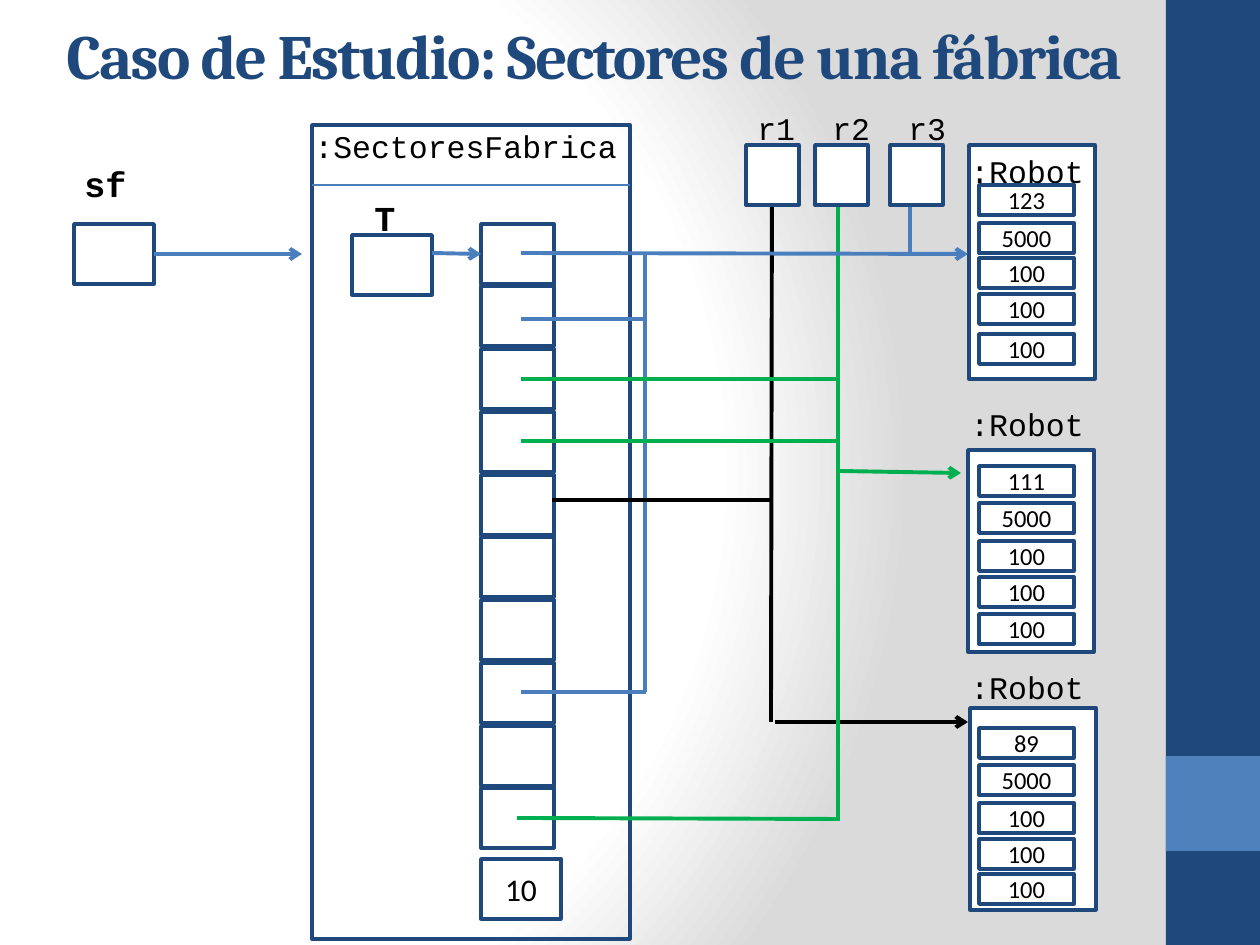
import pptx
import pptx.dml.color
import pptx.enum.shapes
import pptx.enum.text
import pptx.oxml
import pptx.oxml.ns
import pptx.util

EMU_PER_PX = 914400 / 126
COLORS = {
    "navy": "1F497D",
    "accent": "4F81BD",
    "blue": "4B7EBC",
    "green": "00B050",
    "black": "000000",
    "white": "FFFFFF",
    "gray": "DADADA",
}
SHAPES = pptx.enum.shapes.MSO_SHAPE
ANCHOR = pptx.enum.text.MSO_ANCHOR
ALIGN = pptx.enum.text.PP_ALIGN


def px(value):
    return pptx.util.Emu(round(value * EMU_PER_PX))


def color(name):
    return pptx.dml.color.RGBColor.from_string(COLORS[name])


class Diagram:
    mono = "Courier New"
    sans = "Calibri"
    serif = "Cambria"
    border = 2
    wire = 2.25

    def __init__(self, page):
        self.page = page

    def background(self):
        stops = "".join(
            f'<a:gs pos="{position}"><a:srgbClr val="{COLORS[name]}"/></a:gs>'
            for position, name in ((0, "white"), (75000, "white"), (100000, "gray"))
        )
        fill = pptx.oxml.parse_xml(
            f'<p:bg {pptx.oxml.ns.nsdecls("p", "a")}><p:bgPr><a:gradFill rotWithShape="1">'
            f'<a:gsLst>{stops}</a:gsLst><a:path path="circle">'
            '<a:fillToRect l="20000" t="50000" r="100000" b="50000"/></a:path>'
            '</a:gradFill><a:effectLst/></p:bgPr></p:bg>'
        )
        self.page.element.cSld.insert(0, fill)

    def add_span(self, frame, text, size, font, ink="black", bold=False):
        span = frame.paragraphs[0].add_run()
        span.text = text
        span.font.size = pptx.util.Pt(size)
        span.font.name = font
        span.font.bold = bold
        span.font.color.rgb = color(ink)
        return span

    def box(self, left, top, width, height, fill="white", line="navy", text=None, size=14):
        box = self.page.shapes.add_shape(
            SHAPES.RECTANGLE, px(left), px(top), px(width), px(height))
        box.shadow.inherit = False
        if fill:
            box.fill.solid()
            box.fill.fore_color.rgb = color(fill)
        else:
            box.fill.background()
        if line:
            box.line.color.rgb = color(line)
            box.line.width = pptx.util.Pt(self.border)
        else:
            box.line.fill.background()
        if text:
            frame = box.text_frame
            frame.vertical_anchor = ANCHOR.MIDDLE
            frame.paragraphs[0].alignment = ALIGN.CENTER
            self.add_span(frame, text, size, self.sans)
        return box

    def label(self, text, left, top, width, height=50, size=18, bold=False):
        box = self.page.shapes.add_textbox(px(left), px(top), px(width), px(height))
        box.text_frame.word_wrap = True
        self.add_span(box.text_frame, text, size, self.mono, bold=bold)

    def title(self, text, left, top, width, height):
        box = self.page.shapes.add_textbox(px(left), px(top), px(width), px(height))
        frame = box.text_frame
        frame.word_wrap = True
        frame.vertical_anchor = ANCHOR.MIDDLE
        span = self.add_span(frame, text, 36, self.serif, "navy", True)
        span.font._element.set("spc", "-100")

    def line(self, x1, y1, x2, y2, ink="blue", width=wire, arrow=False, begin=None, end=None):
        line = self.page.shapes.add_connector(
            pptx.enum.shapes.MSO_CONNECTOR.STRAIGHT, px(x1), px(y1), px(x2), px(y2))
        line.line.color.rgb = color(ink)
        line.line.width = pptx.util.Pt(width)
        if begin:
            line.begin_connect(*begin)
        if end:
            line.end_connect(*end)
        if arrow:
            stroke = line.line._get_or_add_ln()
            stroke.append(pptx.oxml.parse_xml(
                f'<a:tailEnd {pptx.oxml.ns.nsdecls("a")} type="arrow"/>'))
        line._element.spPr.append(pptx.oxml.parse_xml(
            f'<a:effectLst {pptx.oxml.ns.nsdecls("a")}/>'))

    def robot(self, left, top, height, label_top, serial, field_tops):
        self.box(left, top, 126, height)
        self.label(":Robot", 958, label_top, 149)
        for field_top, value in zip(field_tops, (serial, "5000", "100", "100", "100")):
            self.box(979, field_top, 95, 30, text=value)


def main():
    deck = pptx.Presentation()
    deck.slide_width = px(1260)
    deck.slide_height = px(945)
    diagram = Diagram(deck.slides.add_slide(deck.slide_layouts[6]))
    diagram.background()
    diagram.box(1166, 0, 94, 945, fill="navy", line=None)
    diagram.box(1166, 756, 94, 95, fill="accent", line=None)

    diagram.line(838, 471, 961, 473, "green", arrow=True)
    diagram.line(775, 722, 968, 722, "black", arrow=True)
    diagram.line(771, 722, 772, 171, "black")
    diagram.line(838, 819, 838, 195, "green")
    diagram.line(910, 255, 910, 197)
    for name, box_left, label_left in (("r1", 746, 745), ("r2", 815, 820), ("r3", 890, 896)):
        diagram.box(box_left, 145, 53, 60)
        diagram.label(name, label_left, 103, 64)

    cells = [diagram.box(481, 224 + 251 * index // 4, 73, 60) for index in range(10)]
    diagram.box(312, 125, 318, 814, fill=None)
    diagram.box(352, 235, 80, 60)
    diagram.box(481, 859, 80, 60, text="10", size=18)
    diagram.label("T", 362, 190, 82, 55, 20, True)
    diagram.line(432, 253, 481, 254, arrow=True, end=(cells[0], 1))

    diagram.robot(969, 145, 234, 146, "123", (185, 223, 258, 294, 334))
    diagram.robot(970, 708, 202, 662, "89", (728, 765, 803, 839, 874))
    diagram.robot(968, 450, 202, 399, "111", (466, 503, 541, 577, 614))

    sector_factory = diagram.box(74, 224, 80, 60)
    diagram.label("sf", 72, 156, 82, 55, 20, True)
    diagram.line(154, 254, 302, 254, arrow=True, begin=(sector_factory, 3))
    diagram.label(":SectoresFabrica", 302, 121, 350)
    diagram.line(312, 185, 630, 185, width=1)

    for y in (319, 692):
        diagram.line(521, y, 646, y)
    diagram.line(645, 254, 645, 692)
    for y in (379, 441):
        diagram.line(521, y, 840, y, "green")
    diagram.line(517, 818, 840, 819, "green")
    diagram.line(552, 500, 771, 500, "black")
    diagram.line(521, 253, 968, 254, arrow=True)
    diagram.title("Caso de Estudio: Sectores de una fábrica", 54, 6, 1152, 96)
    deck.save("out.pptx")


if __name__ == "__main__":
    main()
